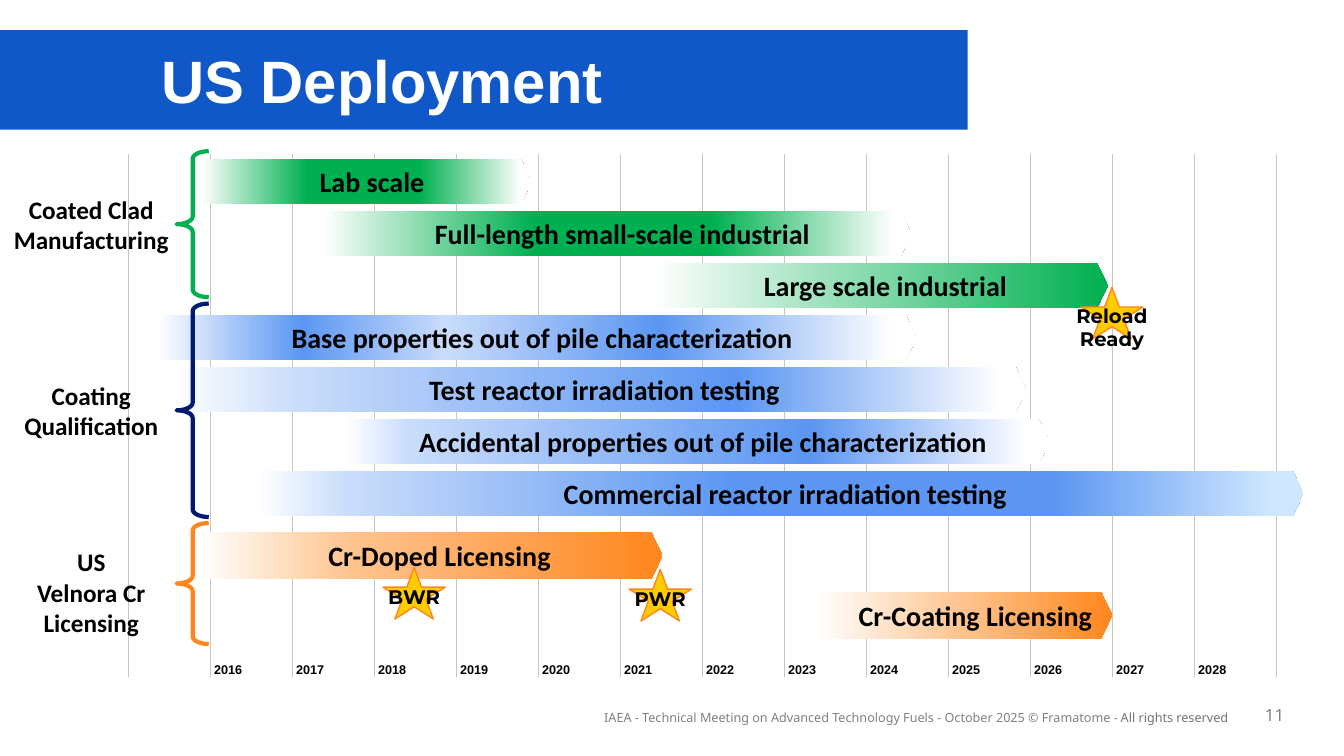
from lxml import etree
from pptx import Presentation
from pptx.dml.color import RGBColor
from pptx.enum.shapes import MSO_SHAPE
from pptx.enum.text import MSO_ANCHOR, PP_ALIGN
from pptx.oxml import parse_xml
from pptx.oxml.ns import nsdecls, qn
from pptx.util import Cm, Pt

LEFT, CENTER, RIGHT = PP_ALIGN.LEFT, PP_ALIGN.CENTER, PP_ALIGN.RIGHT
TOP, MIDDLE, BOTTOM = MSO_ANCHOR.TOP, MSO_ANCHOR.MIDDLE, MSO_ANCHOR.BOTTOM
RECT, ARROW_BAR = MSO_SHAPE.RECTANGLE, MSO_SHAPE.PENTAGON
STAR, BRACE = MSO_SHAPE.STAR_5_POINT, MSO_SHAPE.LEFT_BRACE

# Content
COLORS = {
    "white": "FFFFFF", "black": "000000", "banner": "1057C8", "grid": "CBC7B7",
    "green": "00B050", "pale green": "91DDB4",
    "blue": "5C96F2", "pale blue": "C9DCFB", "ice": "CFE7FF", "navy": "001A70",
    "orange": "FF861D", "pale orange": "FFC38E", "gold": "FFCC00",
    "grey": "808080", "dark grey": "737373",
}
TITLE = "US Deployment"
FOOTER = [("IAEA - Technical Meeting on Advanced Technology Fuels - October 2025 © Framatome - ", "grey"),
          ("All rights reserved", "dark grey")]
PAGE = "11"
YEARS = range(2016, 2029)

# Evenly stacked bars: text, left, width, gradient stops (percent, colour)
STACKED_BARS = [
    ("Lab scale", 5.08, 8.31,
     [(0, "white"), (32, "green"), (66, "green"), (97, "white")]),
    ("Full-length small-scale industrial", 8.13, 14.83,
     [(0, "white"), (36, "green"), (66, "green"), (97, "white")]),
    ("Large scale industrial", 16.43, 11.48,
     [(0, "white"), (43, "pale green"), (100, "green")]),
    ("Base properties out of pile characterization", 3.96, 19.13,
     [(0, "white"), (19, "blue"), (38, "pale blue"), (66, "blue"), (97, "white")]),
    ("Test reactor irradiation testing", 4.32, 21.54,
     [(0, "white"), (15, "pale blue"), (66, "blue"), (97, "white")]),
    ("Accidental properties out of pile characterization", 8.71, 17.73,
     [(0, "white"), (9, "pale blue"), (66, "blue"), (97, "white")]),
    ("Commercial reactor irradiation testing", 6.45, 26.39,
     [(0, "white"), (9, "pale blue"), (46, "blue"), (76, "blue"), (97, "ice")]),
]
# Licensing bars: text, left, top, width, text inset, gradient stops
LICENSING_BARS = [
    ("Cr-Doped Licensing", 5.03, 13.41, 11.66, 0.57,
     [(0, "white"), (33, "pale orange"), (100, "orange")]),
    ("Cr-Coating Licensing", 20.55, 14.91, 7.47, 0.72,
     [(0, "white"), (50, "pale orange"), (100, "orange")]),
]
# Groups: label lines, label middle, brace top, brace height, brace colour
GROUPS = [
    (["Coated Clad", "Manufacturing"], 5.65, 3.81, 3.68, "green"),
    (["Coating", "Qualification"], 10.35, 7.65, 5.38, "navy"),
    (["US", "Velnora Cr", "Licensing"], 14.92, 13.18, 3.05, "orange"),
]
# Milestones: lines, left, top, top inset
STARS = [
    (["BWR"], 9.65, 14.3, 0),
    (["PWR"], 15.85, 14.35, 0),
    (["Reload", "Ready"], 27.23, 7.24, 0.51),
]

# Layout in cm
TABLE_LEFT, TABLE_TOP, TABLE_W, TABLE_H = 3.23, 3.89, 28.93, 13.18
BAR_TOP, BAR_PITCH, BAR_H, LICENSING_H, BAR_INSET = 4.01, 1.31, 1.14, 1.19, 0.41
LABEL_W, LABEL_CENTER, LINE_H = 4.45, 2.3, 0.77
BRACE_LEFT, BRACE_W = 4.45, 0.81
STAR_W, STAR_H = 1.57, 1.3


def rgb(name):
    return RGBColor.from_string(COLORS[name])


def write(tf, lines, size, font, color="black", align=CENTER, anchor=MIDDLE,
          bold=True, wrap=False, inset=(0, 0, 0, 0)):
    """Each line is a string or a list of (text, colour) runs."""
    tf.word_wrap, tf.vertical_anchor = wrap, anchor
    tf.margin_left, tf.margin_top, tf.margin_right, tf.margin_bottom = map(Cm, inset)
    for i, line in enumerate(lines):
        p = tf.paragraphs[0] if i == 0 else tf.add_paragraph()
        p.alignment = align
        for text, run_color in [(line, color)] if isinstance(line, str) else line:
            r = p.add_run()
            r.text = text
            r.font.size, r.font.name, r.font.bold = Pt(size), font, bold
            r.font.color.rgb = rgb(run_color)


def add_box(left, top, width, height):
    return s.shapes.add_textbox(Cm(left), Cm(top), Cm(width), Cm(height)).text_frame


def add_shape(kind, left, top, width, height, fill=None, line=None, line_w=1):
    sp = s.shapes.add_shape(kind, Cm(left), Cm(top), Cm(width), Cm(height))
    sp.shadow.inherit = False
    if fill:
        sp.fill.solid()
        sp.fill.fore_color.rgb = rgb(fill)
    else:
        sp.fill.background()
    if line:
        sp.line.color.rgb = rgb(line)
        sp.line.width = Pt(line_w)
    else:
        sp.line.fill.background()
    return sp


def add_bar(text, left, top, width, height, inset, stops):
    sp = add_shape(ARROW_BAR, left, top, width, height)
    sp.adjustments[0] = 0.237
    sp.fill.gradient()
    sp.fill.gradient_angle = 0
    stop_list = sp._element.spPr.find(qn("a:gradFill")).find(qn("a:gsLst"))
    for old in list(stop_list):
        stop_list.remove(old)
    for percent, color in stops:
        gs = etree.SubElement(stop_list, qn("a:gs"), pos=str(percent * 1000))
        etree.SubElement(gs, qn("a:srgbClr"), val=COLORS[color])
    write(sp.text_frame, [text], 20, "Calibri", inset=(inset, 0, 0, 0))


def line_xml(tag, color=None):
    fill = f'<a:solidFill><a:srgbClr val="{COLORS[color]}"/></a:solidFill>' if color else "<a:noFill/>"
    return parse_xml(f'<a:{tag} {nsdecls("a")} w="12700">{fill}</a:{tag}>')


prs = Presentation()
prs.slide_width, prs.slide_height = Cm(33.86), Cm(19.05)
s = prs.slides.add_slide(prs.slide_layouts[6])

# Footer and page number
write(add_box(7.54, 17.88, 23.4, 0.38), [FOOTER], 9, "Noto Sans",
      align=RIGHT, anchor=TOP, bold=False, wrap=True)
write(add_box(31.57, 17.58, 2.13, 0.86), [PAGE], 12, "Noto Sans", "grey",
      align=LEFT, bold=False, wrap=True, inset=(0.3, 0, 0, 0))

# Year grid: one blank column, then one per year
columns = len(YEARS) + 1
table = s.shapes.add_table(1, columns, Cm(TABLE_LEFT), Cm(TABLE_TOP), Cm(TABLE_W), Cm(TABLE_H)).table
table.first_row = table.horz_banding = False
for i, label in enumerate(["", *map(str, YEARS)]):
    table.columns[i].width = Cm(TABLE_W / columns)
    cell = table.cell(0, i)
    cell.fill.background()
    tcPr = cell._tc.get_or_add_tcPr()
    borders = [("lnL", "grid"), ("lnR", "grid"), ("lnT", None), ("lnB", None)]
    for k, (tag, color) in enumerate(borders):
        tcPr.insert(k, line_xml(tag, color))
    cell.margin_left = cell.margin_right = Cm(0.1)
    cell.margin_top = cell.margin_bottom = 0
    cell.vertical_anchor = BOTTOM
    if label:
        r = cell.text_frame.paragraphs[0].add_run()
        r.text = label
        r.font.size, r.font.name, r.font.bold = Pt(9), "Arial", True
        r.font.color.rgb = rgb("black")

# Activity bars
for i, (text, left, width, stops) in enumerate(STACKED_BARS):
    add_bar(text, left, BAR_TOP + i * BAR_PITCH, width, BAR_H, BAR_INSET, stops)
for text, left, top, width, inset, stops in LICENSING_BARS:
    add_bar(text, left, top, width, LICENSING_H, inset, stops)

# Group labels and braces
for lines, middle, top, height, color in GROUPS:
    label_h = len(lines) * LINE_H
    write(add_box(LABEL_CENTER - LABEL_W / 2, middle - label_h / 2, LABEL_W, label_h),
          lines, 18, "Calibri")
    brace = add_shape(BRACE, BRACE_LEFT, top, BRACE_W, height, line=color, line_w=3)
    brace.adjustments[0] = 0.236

# Milestone stars, lettering outlined in white
for lines, left, top, inset in STARS:
    sp = add_shape(STAR, left, top, STAR_W, STAR_H, "gold", "orange")
    write(sp.text_frame, lines, 14, "Montserrat", inset=(0, inset, 0, 0))
    for p in sp.text_frame.paragraphs:
        for r in p.runs:
            r._r.get_or_add_rPr().insert(0, line_xml("ln", "white"))

# Title banner
banner = add_shape(RECT, 0, 0.76, 24.38, 2.51, "banner")
write(banner.text_frame, [TITLE], 42.7, "Arial", "white", align=LEFT, wrap=True,
      inset=(4.06, 0.13, 0.25, 0.13))

prs.save("out.pptx")
